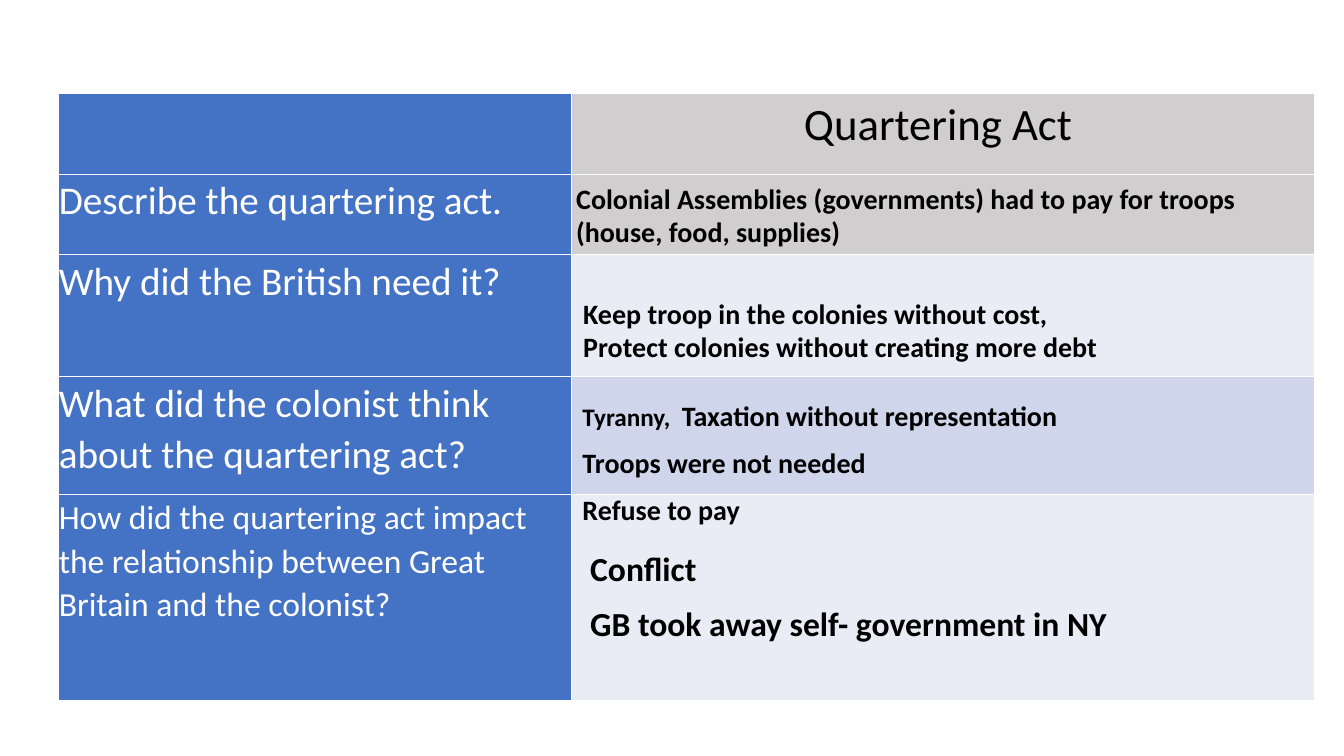
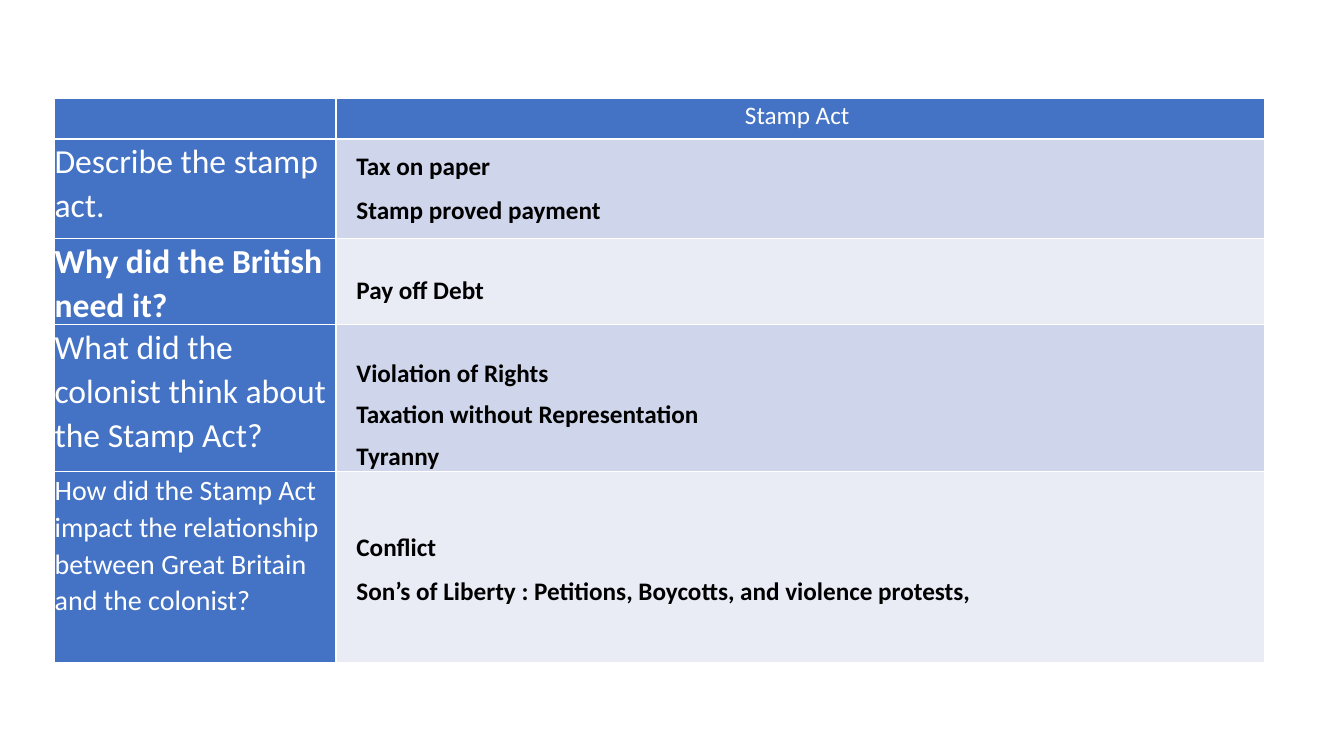
from dataclasses import dataclass

from lxml import etree
from pptx import Presentation
from pptx.dml.color import RGBColor
from pptx.enum.text import MSO_AUTO_SIZE, PP_ALIGN
from pptx.oxml.ns import qn
from pptx.util import Pt

LEFT, CENTER = PP_ALIGN.LEFT, PP_ALIGN.CENTER
FIT_SHAPE = MSO_AUTO_SIZE.SHAPE_TO_FIT_TEXT
BLANK_LAYOUT = 6

FONT = "Calibri"
BLUE, GRAY, PALE, MEDIUM = "4472C4", "D0CECE", "E9EBF5", "CFD5EA"
WHITE, BLACK = "FFFFFF", "000000"
LOOSE = 1.07
GAP = 8


@dataclass(frozen=True)
class Run:
    text: str
    size: float


@dataclass(frozen=True)
class Row:
    height: float
    text: str
    size: float
    fill: str
    bold: bool = False


@dataclass(frozen=True)
class Header:
    height: float
    text: str
    size: float
    color: str
    fill: str


@dataclass(frozen=True)
class Answer:
    left: float
    top: float
    width: float
    height: float
    lines: tuple[str | tuple[Run, ...], ...]
    size: float
    spacing: float = LOOSE
    after: float = GAP


@dataclass(frozen=True)
class Chart:
    left: float
    top: float
    columns: tuple[float, float]
    header: Header
    rows: tuple[Row, ...]
    answers: tuple[Answer, ...]


QUARTERING_ACT = Chart(
    42, 67, (366.5, 530.5),
    Header(57.5, "Quartering Act ", 32, BLACK, GRAY),
    (
        Row(57.5, "Describe the quartering act.", 28, GRAY),
        Row(87, "Why did the British need it?", 28, PALE),
        Row(84.25, "What did the colonist think about the quartering act?", 28, MEDIUM),
        Row(147.5, "How did the quartering act impact the relationship between "
                   "Great Britain and the colonist?", 24, PALE),
    ),
    (
        Answer(404.5, 126, 529, 55.5,
               ("Colonial Assemblies (governments) had to pay for troops "
                "(house, food, supplies)",), 20, 1, 0),
        Answer(409, 279.5, 520, 100,
               ((Run("Tyranny,  ", 18), Run("Taxation without representation", 20)),
                "Troops were not needed", "Refuse to pay"), 20),
        Answer(409.5, 208, 432, 55.5,
               ("Keep troop in the colonies without cost,",
                "Protect colonies without creating more debt"), 20, 1, 0),
        Answer(414.5, 386, 518.5, 107,
               ("Conflict", "GB took away self- government in NY"), 24),
    ),
)

STAMP_ACT = Chart(
    39, 70.5, (201, 663),
    Header(28.8, "Stamp Act ", 18, WHITE, BLUE),
    (
        Row(71, "Describe the stamp act.", 24, MEDIUM),
        Row(61, "Why did the British need it?", 24, PALE, bold=True),
        Row(105, "What did the colonist think about the Stamp Act?", 24, MEDIUM),
        Row(136.5, "How did the Stamp Act impact the relationship between "
                   "Great Britain and the colonist?", 20, PALE),
    ),
    (
        Answer(247.5, 102.5, 605, 61, ("Tax on paper", "Stamp proved payment"), 18),
        Answer(247.5, 192.5, 501, 29, ("Pay off Debt",), 18, 1, 0),
        Answer(247.5, 251.5, 576, 88.5,
               ("Violation of Rights", "Taxation without Representation", "Tyranny"),
               18, 1),
        Answer(247.5, 374.5, 530, 60.5,
               ("Conflict",
                "Son’s of Liberty : Petitions, Boycotts, and violence protests,"), 18),
    ),
)


def rgb(value: str) -> RGBColor:
    return RGBColor.from_string(value)


def write(tf, lines, *, size: float, color: str = BLACK, bold: bool = False,
          align=LEFT, spacing: float = LOOSE, after: float = GAP) -> None:
    """Write one paragraph per line; a line is a string or a tuple of runs."""
    for i, line in enumerate(lines):
        p = tf.paragraphs[0] if i == 0 else tf.add_paragraph()
        p.alignment = align
        p.line_spacing = spacing
        p.space_after = Pt(after)
        for part in (Run(line, size),) if isinstance(line, str) else line:
            r = p.add_run()
            r.text = part.text
            r.font.name = FONT
            r.font.size = Pt(part.size)
            r.font.bold = bold
            r.font.color.rgb = rgb(color)


def style_cell(cell, fill: str) -> None:
    """Fill a cell, drop its margins and give it thin white borders."""
    cell.margin_left = cell.margin_right = cell.margin_top = cell.margin_bottom = 0
    cell.fill.solid()
    cell.fill.fore_color.rgb = rgb(fill)
    props = cell._tc.get_or_add_tcPr()
    for i, side in enumerate("LRTB"):
        ln = etree.Element(qn(f"a:ln{side}"), w=str(Pt(1)))
        solid = etree.SubElement(ln, qn("a:solidFill"))
        etree.SubElement(solid, qn("a:srgbClr"), val=WHITE)
        props.insert(i, ln)


def add_question_table(s, chart: Chart) -> None:
    heights = [chart.header.height, *(row.height for row in chart.rows)]
    table = s.shapes.add_table(
        len(heights), 2, Pt(chart.left), Pt(chart.top),
        Pt(sum(chart.columns)), Pt(sum(heights))).table
    for column, width in zip(table.columns, chart.columns):
        column.width = Pt(width)
    for table_row, height in zip(table.rows, heights):
        table_row.height = Pt(height)

    header = chart.header
    style_cell(table.cell(0, 0), BLUE)
    style_cell(table.cell(0, 1), header.fill)
    write(table.cell(0, 1).text_frame, [header.text], size=header.size,
          color=header.color, align=CENTER)
    for i, row in enumerate(chart.rows, start=1):
        style_cell(table.cell(i, 0), BLUE)
        style_cell(table.cell(i, 1), row.fill)
        write(table.cell(i, 0).text_frame, [row.text], size=row.size,
              color=WHITE, bold=row.bold)


def add_answer(s, answer: Answer) -> None:
    box = s.shapes.add_textbox(Pt(answer.left), Pt(answer.top),
                               Pt(answer.width), Pt(answer.height))
    tf = box.text_frame
    tf.word_wrap = True
    tf.auto_size = FIT_SHAPE
    write(tf, answer.lines, size=answer.size, bold=True,
          spacing=answer.spacing, after=answer.after)


def main() -> None:
    prs = Presentation()
    prs.slide_width, prs.slide_height = Pt(960), Pt(540)
    for chart in (QUARTERING_ACT, STAMP_ACT):
        s = prs.slides.add_slide(prs.slide_layouts[BLANK_LAYOUT])
        add_question_table(s, chart)
        for answer in chart.answers:
            add_answer(s, answer)
    prs.save("out.pptx")


if __name__ == "__main__":
    main()
